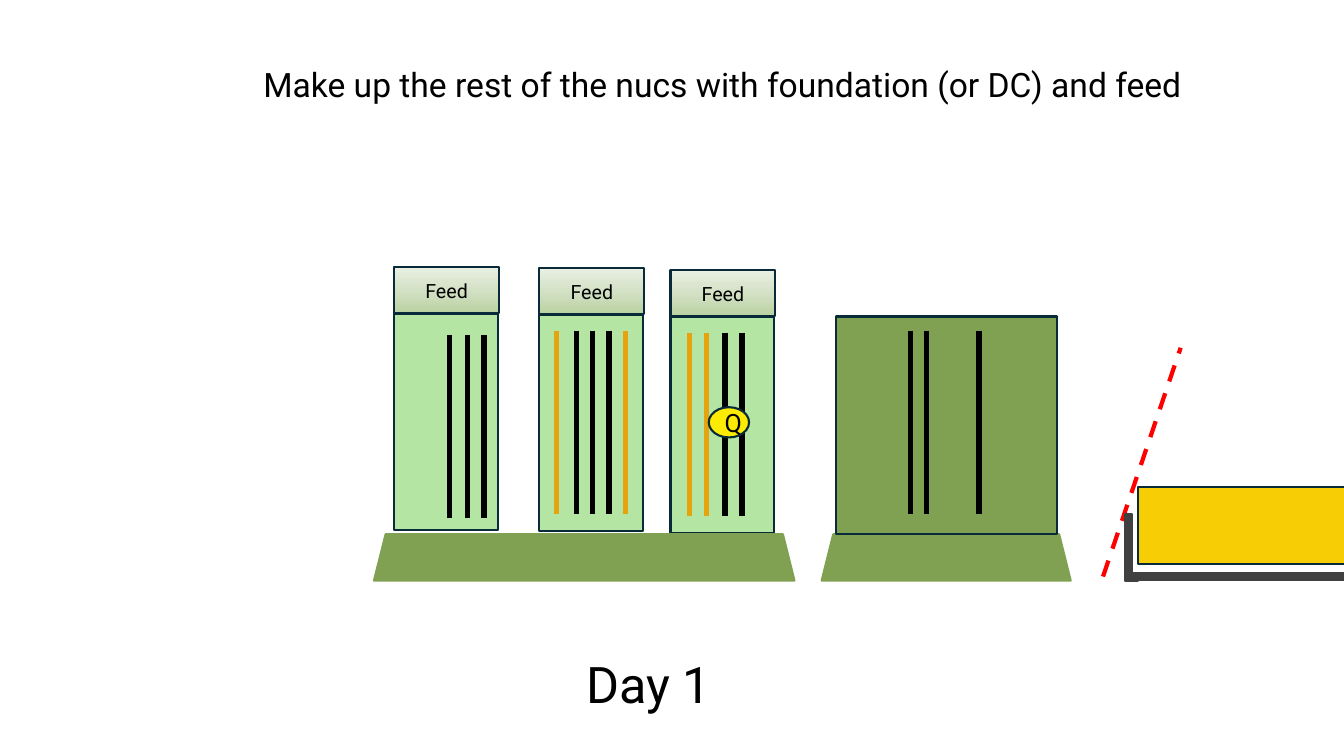
from copy import deepcopy
from dataclasses import dataclass

from lxml import etree
from pptx import Presentation
from pptx import util as u
from pptx.dml.color import RGBColor
from pptx.enum import dml, shapes, text
from pptx.oxml.ns import qn

TITLE = "Make up the rest of the nucs with foundation (or DC) and feed"
DAY = "Day 1"

# Each nuc: left, top, top of its frames, then (frame centre, frame colour name)
NUCS = [
    (3.91, 3.11, 3.32, [(4.46, "comb"), (4.64, "comb"), (4.80, "comb")]),
    (5.35, 3.12, 3.28, [(5.52, "foundation"), (5.72, "comb"), (5.88, "comb"),
                        (6.04, "comb"), (6.20, "foundation")]),
    (6.65, 3.14, 3.30, [(6.84, "foundation"), (7.01, "foundation"),
                        (7.19, "comb"), (7.36, "comb")]),
]
NUC_SIZE = (1.03, 2.15)
FEED_SIZE = (1.04, 0.46)
HIVE = (8.29, 3.14, 2.19, 2.16)
HIVE_FRAMES = (3.28, [9.03, 9.19, 9.71])
FRAME_HEIGHT = 1.82
STAND_TOP, STAND_HEIGHT = 5.30, 0.46
NUC_STAND, HIVE_STAND = (3.71, 4.17), (8.15, 2.47)


@dataclass(frozen=True)
class Theme:
    font: str = "Roboto"
    ink: str = "000000"
    outline: str = "092A39"
    stand: str = "80A152"
    nuc: str = "B4E5A2"
    comb: str = "000000"
    foundation: str = "E5A30D"
    queen: str = "FCEC03"
    box: str = "F7CD05"
    tray: str = "404040"
    ramp: str = "FF0000"
    feed: tuple = ("B9D1A0", "D3E1C5", "E9F0E3")
    title_size: int = 24
    day_size: int = 36
    queen_size: int = 18
    feed_size: int = 14
    edge: float = 1.5
    frame: float = 3.75


T = Theme()
S = shapes.MSO_SHAPE
CENTER, LEFT = text.PP_ALIGN.CENTER, text.PP_ALIGN.LEFT
TOP, MIDDLE = text.MSO_ANCHOR.TOP, text.MSO_ANCHOR.MIDDLE


def rgb(value):
    return RGBColor.from_string(value)


def write(sp, words, size, align=CENTER, anchor=MIDDLE):
    tf = sp.text_frame
    for name, value in {"word_wrap": True, "vertical_anchor": anchor}.items():
        setattr(tf, name, value)
    p = tf.paragraphs[0]
    p.alignment = align
    r = p.add_run()
    r.text = words
    for name, value in {"name": T.font, "size": u.Pt(size), "bold": False}.items():
        setattr(r.font, name, value)
    r.font.color.rgb = rgb(T.ink)


def block(slide, kind, box, fill, line=T.outline):
    sp = slide.shapes.add_shape(kind, *map(u.Inches, box))
    sp.shadow.inherit = False
    sp.fill.solid()
    sp.fill.fore_color.rgb = rgb(fill)
    sp.line.color.rgb = rgb(line)
    sp.line.width = u.Pt(T.edge)
    return sp


def rule(slide, start, end, color, width):
    cx = slide.shapes.add_connector(shapes.MSO_CONNECTOR.STRAIGHT,
                                    *map(u.Inches, (*start, *end)))
    cx.line.color.rgb = rgb(color)
    cx.line.width = u.Pt(width)
    etree.SubElement(cx._element.spPr, qn("a:effectLst"))
    return cx


def frame(slide, x, top, color):
    rule(slide, (x, top), (x, top + FRAME_HEIGHT), color, T.frame)


def stand(slide, left, width):
    block(slide, S.TRAPEZOID, (left, STAND_TOP, width, STAND_HEIGHT), T.stand, T.stand)


def feeder(slide, left, bottom):
    sp = block(slide, S.RECTANGLE, (left, bottom - FEED_SIZE[1], *FEED_SIZE), T.nuc)
    sp.fill.gradient()
    sp.fill.gradient_angle = 90
    first = sp.fill._fill._gradFill.gsLst[0]
    middle = deepcopy(first)
    first.addnext(middle)
    middle.set("pos", "50000")
    for stop, color in zip(sp.fill.gradient_stops, T.feed):
        stop.color.rgb = rgb(color)
    write(sp, "Feed", T.feed_size)


def swarm_box(slide):
    """Yellow box in its tray, with the dashed ramp line beside it."""
    block(slide, S.RECTANGLE, (11.29, 4.83, 2.19, 0.77), T.box)
    ramp = rule(slide, (10.94, 5.72), (11.71, 3.45), T.ramp, 3)
    ramp.line.dash_style = dml.MSO_LINE.DASH
    block(slide, S.CORNER, (11.16, 5.10, 0.13, 0.66), T.tray, T.tray)
    rule(slide, (13.62, 5.72), (11.15, 5.72), T.tray, 7)


def main():
    prs = Presentation()
    prs.slide_width, prs.slide_height = u.Inches(13.33), u.Inches(7.5)
    slide = prs.slides.add_slide(prs.slide_layouts[5])

    title = slide.shapes.title
    title_box = dict(left=2.10, top=0.58, width=10.13, height=0.50)
    for name, value in title_box.items():
        setattr(title, name, u.Inches(value))
    write(title, TITLE, T.title_size, anchor=TOP)

    swarm_box(slide)

    stand(slide, *HIVE_STAND)
    block(slide, S.RECTANGLE, HIVE, T.stand)
    top, centres = HIVE_FRAMES
    for x in centres:
        frame(slide, x, top, T.comb)

    for left, top, frame_top, frames in NUCS:
        block(slide, S.RECTANGLE, (left, top, *NUC_SIZE), T.nuc)
        for x, kind in frames:
            frame(slide, x, frame_top, getattr(T, kind))
        feeder(slide, left, top)
    stand(slide, *NUC_STAND)

    queen = block(slide, S.OVAL, (7.03, 4.04, 0.40, 0.30), T.queen)
    write(queen, "Q", T.queen_size, LEFT)

    day = slide.shapes.add_textbox(*map(u.Inches, (5.34, 6.43, 2.19, 0.71)))
    write(day, DAY, T.day_size, anchor=TOP)
    prs.save("out.pptx")


if __name__ == "__main__":
    main()
